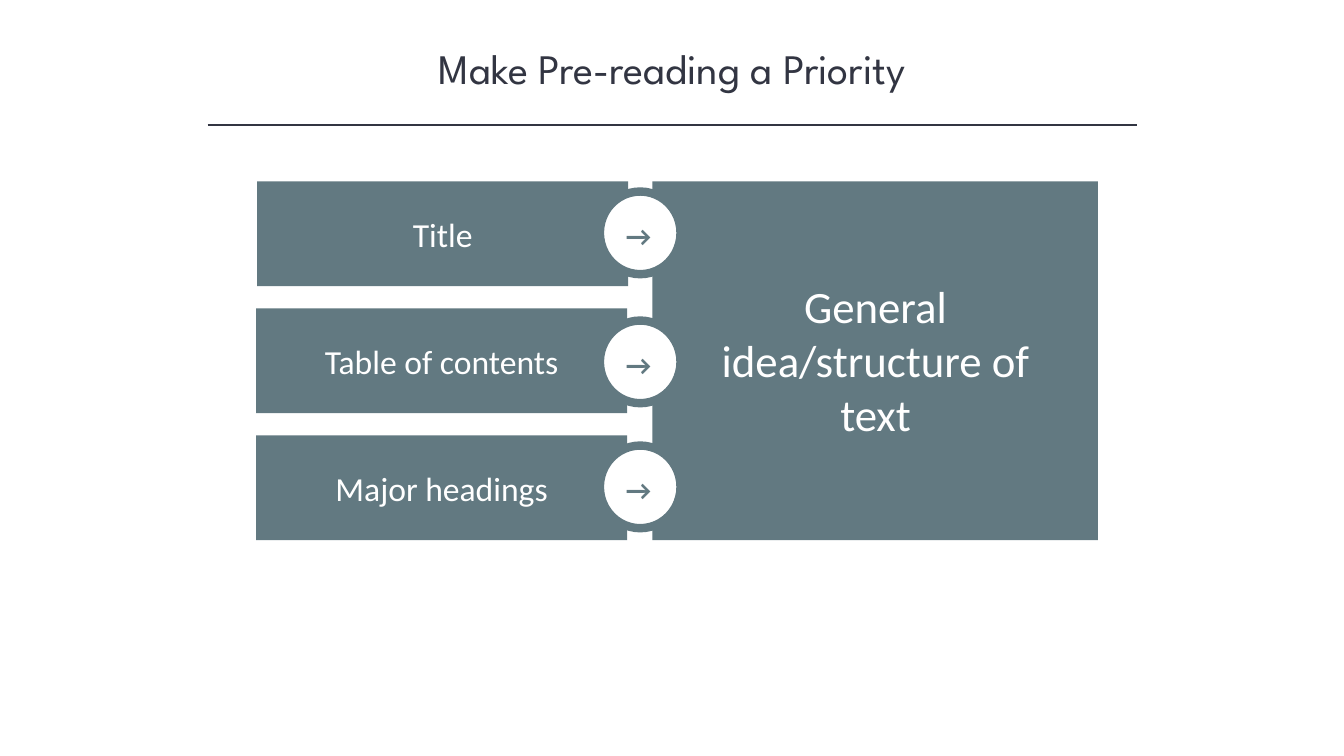
from lxml.etree import SubElement
from pptx import Presentation
from pptx.dml.color import RGBColor
from pptx.enum.shapes import MSO_SHAPE, MSO_CONNECTOR
from pptx.enum.text import MSO_ANCHOR, PP_ALIGN
from pptx.oxml.ns import qn
from pptx.util import Pt

TITLE = "Make Pre-reading a Priority"
RESULT = "General idea/structure of text"
ROWS = [
    ("Title", 255, 190),
    ("Table of contents", 254, 318),
    ("Major headings", 254, 442),
]
INK, SLATE, WHITE = "323542", "627981", "FFFFFF"
TOP, PITCH = 180, 126
HEAD = {"size": Pt(30), "name": "League Spartan"}
LABEL = {"size": Pt(24), "name": "Calibri"}
LARGE = {"size": Pt(32), "name": "Calibri"}
ARROW = {"size": Pt(20), "name": "Calibri", "bold": True}


def px(n):
    return n * 9144


def color(text):
    return RGBColor.from_string(text)


def write(shape, text, style, hue, anchor=MSO_ANCHOR.MIDDLE,
          align=PP_ALIGN.CENTER, wrap=True):
    frame = shape.text_frame
    frame.word_wrap = wrap
    frame.vertical_anchor = anchor
    para = frame.paragraphs[0]
    para.alignment = align
    run = para.add_run()
    run.text = text
    for key, value in style.items():
        setattr(run.font, key, value)
    run.font.color.rgb = color(hue)


def draw(kind, box, fill, edge=None):
    shape = slide.shapes.add_shape(kind, *map(px, box))
    shape.shadow.inherit = False
    shape.fill.solid()
    shape.fill.fore_color.rgb = color(fill)
    if edge:
        shape.line.color.rgb = color(edge)
        shape.line.width = Pt(6)
    else:
        shape.line.fill.background()
    return shape


def label(box, *args, **kwargs):
    shape = slide.shapes.add_textbox(*map(px, box))
    write(shape, *args, anchor=MSO_ANCHOR.TOP, **kwargs)


deck = Presentation()
deck.slide_width, deck.slide_height = px(1333), px(750)
slide = deck.slides.add_slide(deck.slide_layouts[6])

label((167, 37, 1000, 61), TITLE, HEAD, INK)
rule = slide.shapes.add_connector(
    MSO_CONNECTOR.STRAIGHT, *map(px, (206, 124, 1128, 124)))
rule.line.color.rgb = color(INK)
rule.line.width = Pt(1)
SubElement(rule.element.spPr, qn("a:effectLst"))

draw(MSO_SHAPE.RECTANGLE, (647, TOP, 442, 356), SLATE)
panel = draw(MSO_SHAPE.RECTANGLE, (685, 271, 367, 172), SLATE)
write(panel, RESULT, LARGE, WHITE)

for i, (text, left, _) in enumerate(ROWS):
    bar = draw(MSO_SHAPE.RECTANGLE, (left, TOP + i * PITCH, 368, 104), SLATE)
    write(bar, text, LABEL, WHITE)

for _, _, top in ROWS:
    draw(MSO_SHAPE.OVAL, (595, top, 80, 82), WHITE, SLATE)
    label((611, top + 22, 48, 44), "→", ARROW, SLATE,
          align=PP_ALIGN.LEFT, wrap=False)

deck.save("out.pptx")
